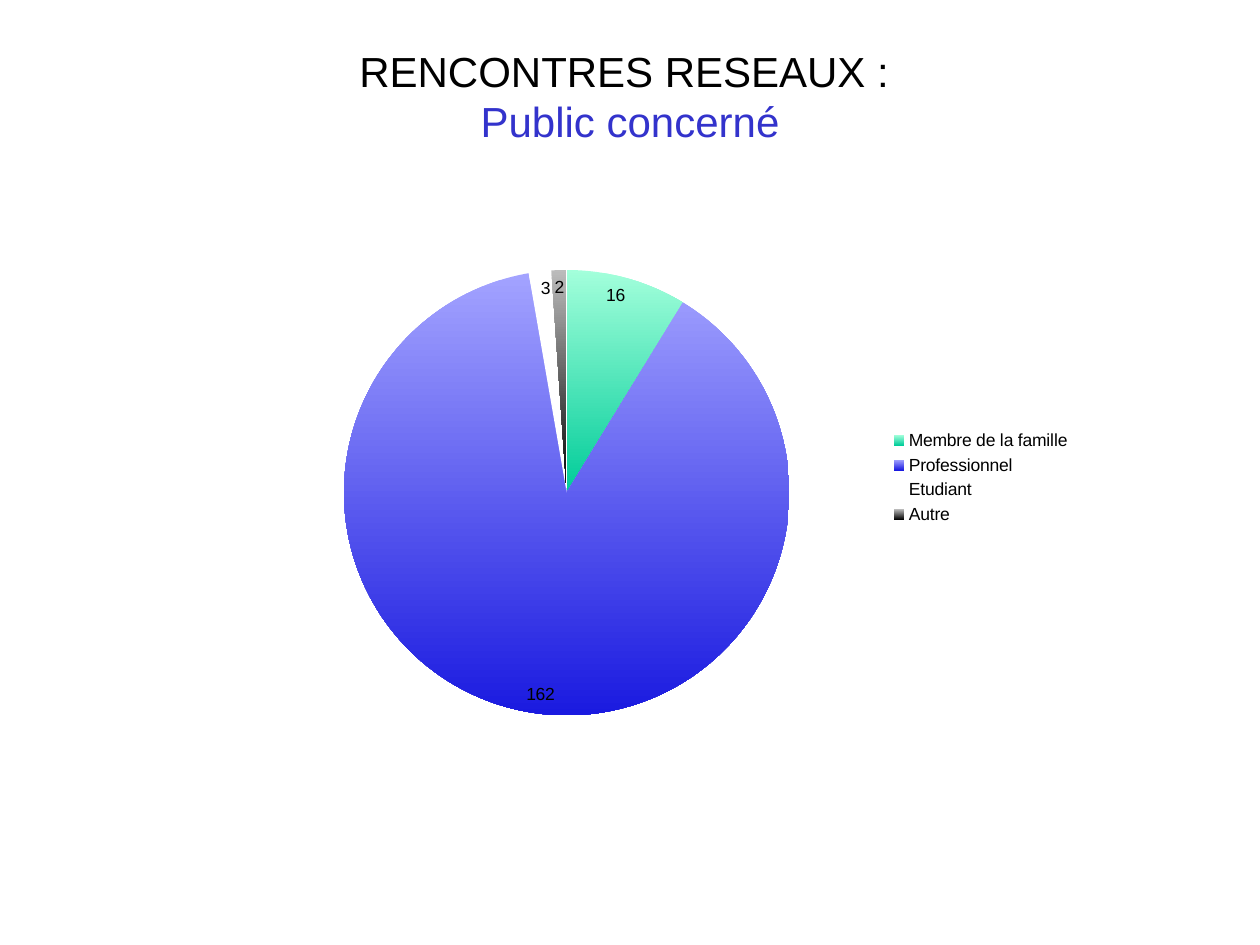
from dataclasses import dataclass

from lxml.etree import SubElement
from pptx import Presentation
from pptx.chart.data import CategoryChartData
from pptx.dml.color import RGBColor
from pptx.enum.chart import XL_CHART_TYPE, XL_LABEL_POSITION, XL_LEGEND_POSITION
from pptx.enum.text import MSO_ANCHOR, PP_ALIGN
from pptx.oxml.ns import qn
from pptx.util import Inches, Pt

FONT = "Arial"
COLORS = {
    "black": "000000",
    "white": "FFFFFF",
    "blue": "3333CC",
    "mint": "A3FFDB",
    "green": "00CC99",
    "lavender": "A3A3FF",
    "deep_blue": "1A1AE0",
    "grey": "BCBCBC",
}


@dataclass(frozen=True)
class Slice:
    label: str
    count: int
    top_color: str
    bottom_color: str


SLICES = [
    Slice("Membre de la famille", 16, "mint", "green"),
    Slice("Professionnel", 162, "lavender", "deep_blue"),
    Slice("Etudiant", 3, "white", "white"),
    Slice("Autre", 2, "grey", "black"),
]


def rgb(name: str) -> RGBColor:
    return RGBColor.from_string(COLORS[name])


def format_font(font, *, size: float, color: str) -> None:
    font.name = FONT
    font.size = Pt(size)
    font.color.rgb = rgb(color)


def add_text(paragraph, text: str, *, size: float, color: str) -> None:
    run = paragraph.add_run()
    run.text = text
    format_font(run.font, size=size, color=color)


def add_title(slide) -> None:
    title = slide.shapes.title
    title.left, title.top = Inches(0.75), Inches(0.21)
    title.width, title.height = Inches(8.5), Inches(1.1)
    frame = title.text_frame
    frame.word_wrap = True
    frame.vertical_anchor = MSO_ANCHOR.MIDDLE
    paragraph = frame.paragraphs[0]
    paragraph.alignment = PP_ALIGN.CENTER
    add_text(paragraph, "RENCONTRES RESEAUX : ", size=24, color="black")
    paragraph.add_line_break()
    add_text(paragraph, "Public concerné", size=24, color="blue")


def fill_slice(point, item: Slice) -> None:
    fill = point.format.fill
    if item.top_color == item.bottom_color:
        fill.solid()
        fill.fore_color.rgb = rgb(item.top_color)
    else:
        fill.gradient()
        fill.gradient_angle = 270
        for stop, color in zip(fill.gradient_stops, (item.top_color, item.bottom_color)):
            stop.color.rgb = rgb(color)
    point.format.line.fill.background()


def place_plot(chart, **fractions: float) -> None:
    """Fix the inner plot area, in fractions of the chart frame."""
    plot_area = chart.plots[0]._element.getparent()
    layout = plot_area.find(qn("c:layout"))
    if layout is None:
        layout = SubElement(plot_area, qn("c:layout"))
        plot_area.insert(0, layout)
    manual = SubElement(layout, qn("c:manualLayout"))
    settings = {"layoutTarget": "inner", "xMode": "edge", "yMode": "edge", **fractions}
    for tag, value in settings.items():
        SubElement(manual, qn(f"c:{tag}")).set("val", str(value))


def add_audience_pie(slide) -> None:
    data = CategoryChartData()
    data.categories = [item.label for item in SLICES]
    data.add_series("Series 1", [item.count for item in SLICES])
    chart = slide.shapes.add_chart(
        XL_CHART_TYPE.PIE, Inches(1.93), Inches(1.78), Inches(6.67), Inches(4.02), data
    ).chart
    chart.has_title = False
    format_font(chart.font, size=10, color="black")
    chart.has_legend = True
    chart.legend.position = XL_LEGEND_POSITION.RIGHT
    chart.legend.include_in_layout = False

    plot = chart.plots[0]
    plot.vary_by_categories = True
    plot.has_data_labels = True
    labels = plot.data_labels
    labels.show_value = True
    labels.show_percentage = False
    labels.position = XL_LABEL_POSITION.INSIDE_END
    format_font(labels.font, size=10, color="black")
    for index, item in enumerate(SLICES):
        fill_slice(plot.series[0].points[index], item)
    place_plot(chart, x=0.12, y=0.09, w=0.53, h=0.88)


def main() -> None:
    presentation = Presentation()
    presentation.slide_width, presentation.slide_height = Inches(10), Inches(7.5)
    slide = presentation.slides.add_slide(presentation.slide_layouts[5])
    add_title(slide)
    add_audience_pie(slide)
    presentation.save("out.pptx")


if __name__ == "__main__":
    main()
